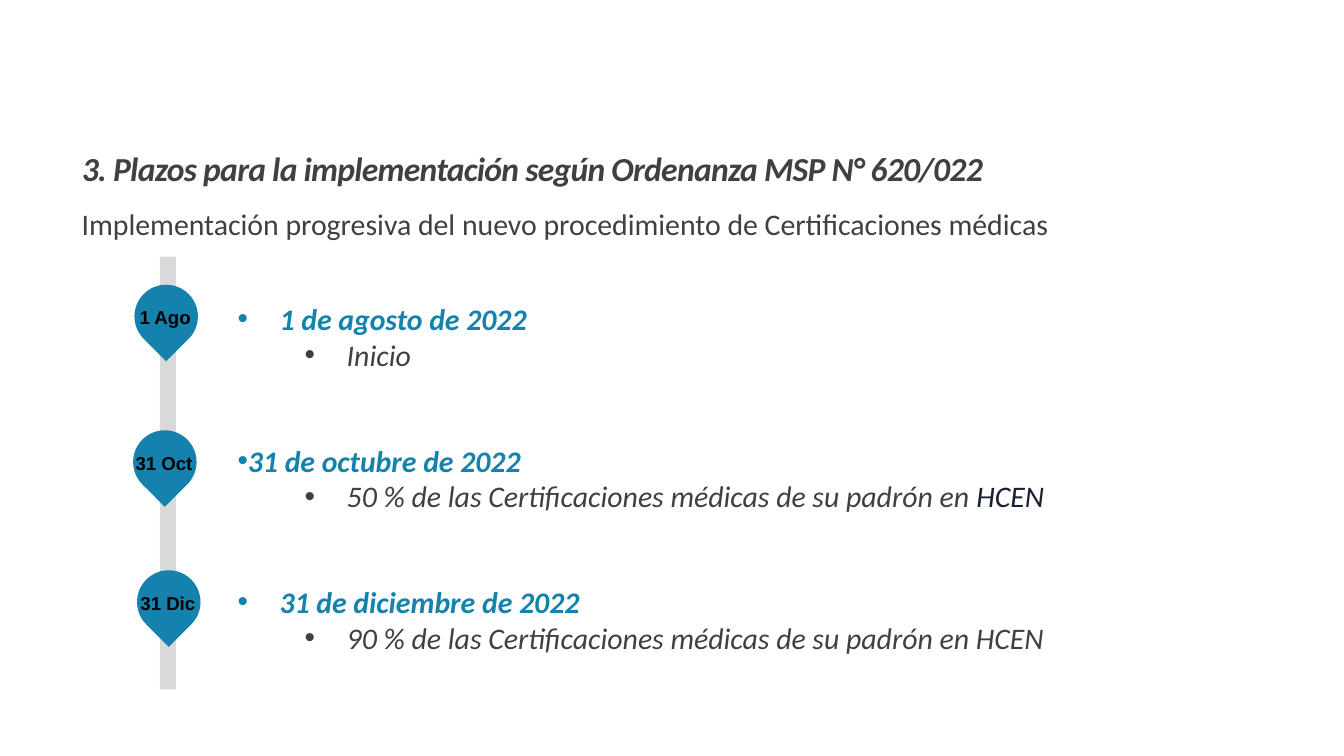
from lxml import etree
from pptx import Presentation
from pptx.dml.color import RGBColor
from pptx.enum.shapes import MSO_SHAPE
from pptx.enum.text import MSO_ANCHOR, PP_ALIGN
from pptx.oxml.ns import qn
from pptx.util import Pt

RECT, TEAR = MSO_SHAPE.RECTANGLE, MSO_SHAPE.TEAR
TOP, MIDDLE, BOTTOM = MSO_ANCHOR.TOP, MSO_ANCHOR.MIDDLE, MSO_ANCHOR.BOTTOM
CENTER = PP_ALIGN.CENTER

BLUE = RGBColor(0x14, 0x82, 0xAC)
GREY = RGBColor(0x40, 0x40, 0x40)
LIGHT = RGBColor(0xD9, 0xD9, 0xD9)
NAVY = RGBColor(0x1A, 0x20, 0x34)
BLACK = RGBColor(0, 0, 0)

TITLE = dict(name="Calibri", size=Pt(18), bold=True, italic=True)
BODY = dict(name="Calibri", size=Pt(16))
DATE = dict(BODY, bold=True, italic=True)
DETAIL = dict(BODY, italic=True)
LABEL = dict(name="Arial", size=Pt(10), bold=True)

HANG = 22.5
DETAIL_INDENT = 58.5
GAP = 37.5
PIN = 34

PINS = [("1 Ago", 0.7, 15), ("31 Oct", 0, 93), ("31 Dic", 2.1, 168)]
MILESTONES = [
    ("1 de agosto de 2022", HANG, [("Inicio", GREY)]),
    ("31 de octubre de 2022", 0,
     [("50 % de las Certificaciones médicas de su padrón en ", GREY), ("HCEN", NAVY)]),
    ("31 de diciembre de 2022", HANG,
     [("90 % de las Certificaciones médicas de su padrón en HCEN", GREY)]),
]


def add_run(p, text, style, color):
    r = p.add_run()
    r.text = text
    for key, value in style.items():
        setattr(r.font, key, value)
    r.font.color.rgb = color
    return r


def add_text_frame(s, box, **settings):
    tf = s.shapes.add_textbox(*map(Pt, box)).text_frame
    for key, value in dict(dict(word_wrap=True), **settings).items():
        setattr(tf, key, value)
    return tf


def add_solid(s, kind, box, color):
    sp = s.shapes.add_shape(kind, *map(Pt, box))
    sp.shadow.inherit = False
    sp.fill.solid()
    sp.fill.fore_color.rgb = color
    sp.line.fill.background()
    return sp


def add_bullet(p, left):
    pPr = p._p.get_or_add_pPr()
    pPr.set("marL", str(Pt(left)))
    pPr.set("indent", str(-Pt(HANG)))
    etree.SubElement(pPr, qn("a:buFont")).set("typeface", "Arial")
    etree.SubElement(pPr, qn("a:buChar")).set("char", "•")


def add_heading(s, left, top, width):
    tf = add_text_frame(s, (left, top, width, 26), vertical_anchor=BOTTOM)
    p = tf.paragraphs[0]
    p.line_spacing = 0.85
    r = add_run(p, "3. Plazos para la implementación según Ordenanza MSP N° 620/022",
                TITLE, GREY)
    r.font._element.set("spc", "-40")
    tf = add_text_frame(s, (left, top + 28, width + 57, 46))
    add_run(tf.paragraphs[0],
            "Implementación progresiva del nuevo procedimiento de Certificaciones médicas",
            BODY, GREY)


def add_pin(s, left, top, text):
    sp = add_solid(s, TEAR, (left, top, PIN, PIN), BLUE)
    sp.rotation = 135
    inset = Pt(1.5)
    tf = add_text_frame(s, (left - 0.5, top + 14, PIN, 10.8), word_wrap=False,
                        vertical_anchor=MIDDLE, margin_left=inset, margin_right=inset,
                        margin_top=inset, margin_bottom=inset)
    p = tf.paragraphs[0]
    p.alignment = CENTER
    p.line_spacing = 0.6
    add_run(p, text, LABEL, BLACK)


def add_timeline(s, left, top, height):
    add_solid(s, RECT, (left + 14.4, top, 8.6, height), LIGHT)
    for text, dx, dy in PINS:
        add_pin(s, left + dx, top + dy, text)


def add_milestones(s, box):
    tf = add_text_frame(s, box, vertical_anchor=TOP, margin_top=Pt(22))
    for i, (date, indent, details) in enumerate(MILESTONES):
        p = tf.add_paragraph() if i else tf.paragraphs[0]
        add_bullet(p, indent)
        if i:
            p.space_before = Pt(GAP)
        add_run(p, date, DATE, BLUE)
        p = tf.add_paragraph()
        p.level = 1
        add_bullet(p, DETAIL_INDENT)
        for text, color in details:
            add_run(p, text, DETAIL, color)


def main():
    prs = Presentation()
    prs.slide_width, prs.slide_height = Pt(720), Pt(405)
    s = prs.slides.add_slide(prs.slide_layouts[6])
    add_heading(s, 36.7, 78.5, 574)
    add_timeline(s, 71.3, 137.5, 231.8)
    add_milestones(s, (120.2, 139, 504, 259))
    prs.save("out.pptx")


if __name__ == "__main__":
    main()
